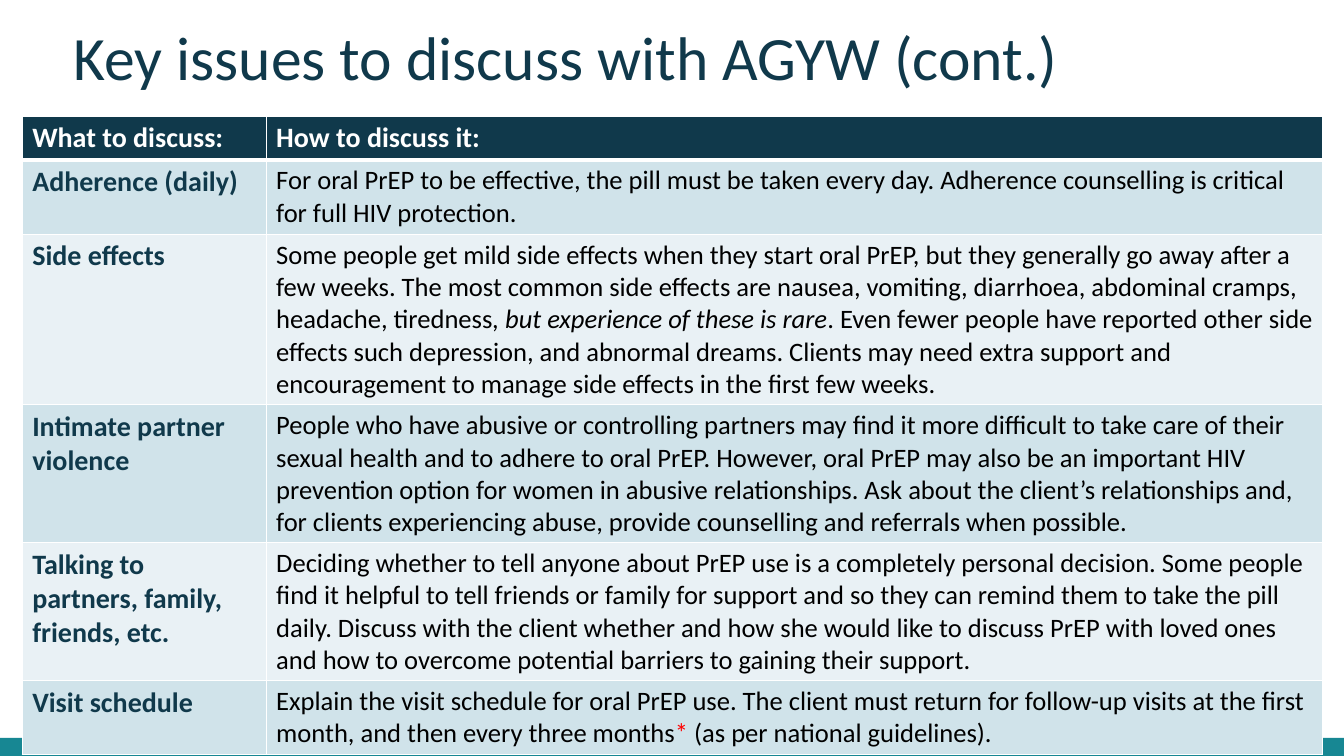
from dataclasses import dataclass

from lxml.etree import SubElement
from pptx import Presentation
from pptx.dml.color import RGBColor
from pptx.enum.shapes import MSO_SHAPE
from pptx.enum.text import MSO_ANCHOR
from pptx.oxml.ns import qn
from pptx.slide import Slide
from pptx.table import Table, _Cell
from pptx.util import Inches, Pt

FONT = "Calibri"
COLORS = {
    "navy": "10394B",
    "teal": "178793",
    "band_dark": "D0E3EA",
    "band_light": "E9F1F5",
    "white": "FFFFFF",
    "black": "000000",
    "red": "FF0000",
}
COLUMN_WIDTHS = (2.42, 10.48)


@dataclass(frozen=True)
class Span:
    text: str
    italic: bool = False
    color: str = "black"


@dataclass(frozen=True)
class Issue:
    topic: str
    advice: tuple[Span, ...]
    height: float


ISSUES = (
    Issue("Adherence (daily)", (
        Span("For oral PrEP to be effective, the pill must be taken every day. "
             "Adherence counselling is critical for full HIV protection."),
    ), 0.74),
    Issue("Side effects", (
        Span("Some people get mild side effects when they start oral PrEP, but they "
             "generally go away after a few weeks. The most common side effects are "
             "nausea, vomiting, diarrhoea, abdominal cramps, headache, tiredness"),
        Span(", but experience of these is rare", italic=True),
        Span(". Even fewer people have reported other side effects such depression, "
             "and abnormal dreams. Clients may need extra support and encouragement "
             "to manage side effects in the first few weeks."),
    ), 1.69),
    Issue("Intimate partner violence", (
        Span("People who have abusive or controlling partners may find it more "
             "difficult to take care of their sexual health and to adhere to oral "
             "PrEP. However, oral PrEP may also be an important HIV prevention option "
             "for women in abusive relationships. Ask about the client’s relationships "
             "and, for clients experiencing abuse, provide counselling and referrals "
             "when possible."),
    ), 1.36),
    Issue("Talking to partners, family, friends, etc.", (
        Span("Deciding whether to tell anyone about PrEP use is a completely personal "
             "decision. Some people find it helpful to tell friends or family for "
             "support and so they can remind them to take the pill daily. Discuss with "
             "the client whether and how she would like to discuss PrEP with loved "
             "ones and how to overcome potential barriers to gaining their support."),
    ), 1.37),
    Issue("Visit schedule", (
        Span("Explain the visit schedule for oral PrEP use. The client must return for "
             "follow-up visits at the first month, and then every three months"),
        Span("*", color="red"),
        Span(" (as per national guidelines)."),
    ), 0.73),
)
HEADER_HEIGHT = 0.43


def rgb(name: str) -> RGBColor:
    return RGBColor.from_string(COLORS[name])


def set_borders(cell: _Cell, bottom_width: float) -> None:
    """Draw white borders; they must come before the cell's fill."""
    properties = cell._tc.get_or_add_tcPr()
    for side, width in (("L", 1), ("R", 1), ("T", 1), ("B", bottom_width)):
        border = SubElement(properties, qn(f"a:ln{side}"), w=str(Pt(width)))
        fill = SubElement(border, qn("a:solidFill"))
        SubElement(fill, qn("a:srgbClr"), val=COLORS["white"])


def fill_cell(cell: _Cell, spans: tuple[Span, ...], size: float, bold: bool,
              background: str, bottom_width: float = 1) -> None:
    set_borders(cell, bottom_width)
    cell.fill.solid()
    cell.fill.fore_color.rgb = rgb(background)
    paragraph = cell.text_frame.paragraphs[0]
    paragraph.font.name = FONT
    paragraph.font.size = Pt(size)
    paragraph.font.bold = bold
    for span in spans:
        run = paragraph.add_run()
        run.text = span.text
        run.font.color.rgb = rgb(span.color)
        if span.italic:
            run.font.italic = True


def add_footer_bar(slide: Slide) -> None:
    footer_bar = slide.shapes.add_shape(
        MSO_SHAPE.RECTANGLE, Inches(0), Inches(7.32), Inches(13.33), Inches(0.18))
    footer_bar.shadow.inherit = False
    footer_bar.fill.solid()
    footer_bar.fill.fore_color.rgb = rgb("teal")
    footer_bar.line.fill.background()


def add_heading(slide: Slide, text: str) -> None:
    heading = slide.shapes.add_textbox(
        Inches(0.22), Inches(0.22), Inches(12.9), Inches(0.75)).text_frame
    heading.word_wrap = True
    heading.margin_left = Inches(0.51)
    heading.vertical_anchor = MSO_ANCHOR.BOTTOM
    paragraph = heading.paragraphs[0]
    paragraph.text = text
    paragraph.line_spacing = Pt(44.8)
    paragraph.font.name = FONT
    paragraph.font.size = Pt(44)
    paragraph.font.color.rgb = rgb("navy")


def add_issue_table(slide: Slide) -> Table:
    heights = [HEADER_HEIGHT, *(issue.height for issue in ISSUES)]
    table = slide.shapes.add_table(
        len(heights), len(COLUMN_WIDTHS), Inches(0.22), Inches(1.15),
        Inches(sum(COLUMN_WIDTHS)), Inches(sum(heights))).table
    for column, width in zip(table.columns, COLUMN_WIDTHS):
        column.width = Inches(width)
    for row, height in zip(table.rows, heights):
        row.height = Inches(height)

    # Header row
    for column, label in enumerate(("What to discuss:", "How to discuss it:")):
        fill_cell(table.cell(0, column), (Span(label, color="white"),),
                  20, True, "navy", bottom_width=3)

    # Issue rows in alternating bands
    for row, issue in enumerate(ISSUES, start=1):
        band = "band_dark" if row % 2 else "band_light"
        fill_cell(table.cell(row, 0), (Span(issue.topic, color="navy"),), 20, True, band)
        fill_cell(table.cell(row, 1), issue.advice, 19, False, band)
    return table


def main() -> None:
    presentation = Presentation()
    presentation.slide_width = Inches(13.33)
    presentation.slide_height = Inches(7.5)
    slide = presentation.slides.add_slide(presentation.slide_layouts[6])
    add_footer_bar(slide)
    add_heading(slide, "Key issues to discuss with AGYW (cont.)")
    add_issue_table(slide)
    presentation.save("out.pptx")


if __name__ == "__main__":
    main()
